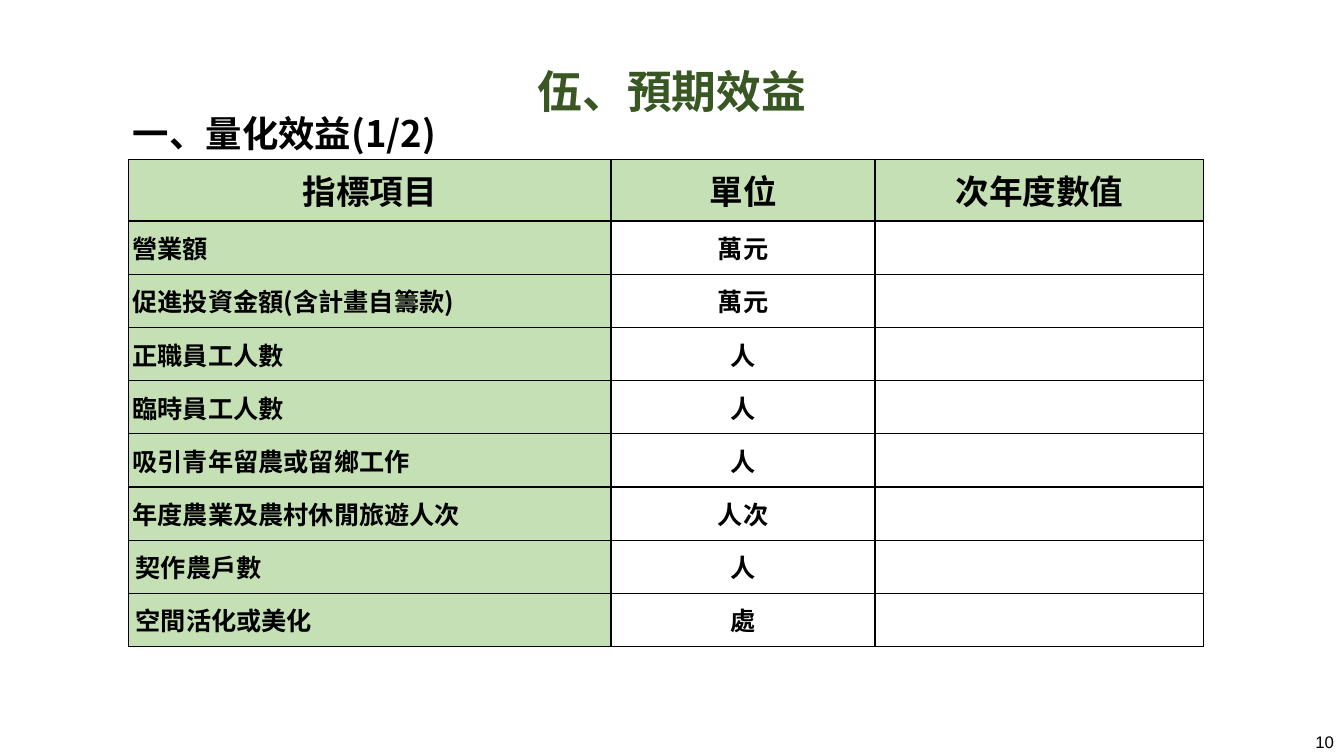
import pptx
import pptx.util
import pptx.dml.color
import pptx.enum.text
import pptx.oxml.ns
import lxml.etree

Cm = pptx.util.Cm
Pt = pptx.util.Pt
ALIGN = pptx.enum.text.PP_ALIGN
MID = pptx.enum.text.MSO_ANCHOR.MIDDLE
TOP = pptx.enum.text.MSO_ANCHOR.TOP
NOTO = "Noto Sans CJK SC"
GREEN, WHITE, BLACK = "C5E0B4", "FFFFFF", "000000"
HEAD = ["指標項目", "單位", "次年度數值"]
ITEMS = [
    ("營業額", "萬元"),
    ("促進投資金額(含計畫自籌款)", "萬元"),
    ("正職員工人數", "人"),
    ("臨時員工人數", "人"),
    ("吸引青年留農或留鄉工作", "人"),
    ("年度農業及農村休閒旅遊人次", "人次"),
    ("契作農戶數", "人"),
    ("空間活化或美化", "處"),
]
WIDE_FROM = 7  # the last rows have wider side margins
COLS = [12.16, 6.65, 8.29]
HEAD_H, ROW_H = 1.55, 1.34


def color(code):
    return pptx.dml.color.RGBColor.from_string(code)


def add(parent, tag, **attrs):
    return lxml.etree.SubElement(parent, pptx.oxml.ns.qn(tag), attrs)


def write(frame, text, size=18, font=NOTO, ink=BLACK, bold=True,
          align=ALIGN.LEFT, hang=0):
    """Fill the first paragraph of a text frame and return it."""
    para = frame.paragraphs[0]
    para.alignment = align
    if hang:
        props = para._p.get_or_add_pPr()
        props.set("marL", str(Cm(hang)))
        props.set("indent", str(-Cm(hang)))
    run = para.add_run()
    run.text = text
    run.font.size = Pt(size)
    run.font.bold = bold
    run.font.name = font
    run.font.color.rgb = color(ink)
    add(run._r.get_or_add_rPr(), "a:ea", typeface=NOTO)
    return para


def place(shape, box, anchor):
    shape.left, shape.top, shape.width, shape.height = map(Cm, box)
    frame = shape.text_frame
    frame.word_wrap = True
    frame.auto_size = pptx.enum.text.MSO_AUTO_SIZE.NONE
    frame.vertical_anchor = anchor
    return frame


def add_text(slide, box, anchor):
    return place(slide.shapes.add_textbox(0, 0, 0, 0), box, anchor)


def add_title(slide, box):
    frame = place(slide.shapes.title, box, MID)
    write(frame, "伍、預期效益", size=32, ink="385723", align=ALIGN.CENTER)


def add_section(slide, box):
    para = write(add_text(slide, box, TOP), "一、量化效益(1/2)", size=26)
    para.line_spacing = Pt(22)
    para.space_after = Pt(6)


def add_number(slide, box):
    write(add_text(slide, box, MID), "10", size=12, font="Arial",
          bold=False, align=ALIGN.RIGHT)


def style_cell(cell, fill, side):
    cell.margin_left = cell.margin_right = Cm(side)
    cell.margin_top = cell.margin_bottom = 0
    cell.vertical_anchor = MID
    props = cell._tc.get_or_add_tcPr()
    for edge in ("a:lnL", "a:lnR", "a:lnT", "a:lnB"):
        line = add(props, edge, w=str(Pt(1)))
        add(add(line, "a:solidFill"), "a:srgbClr", val=BLACK)
    cell.fill.solid()
    cell.fill.fore_color.rgb = color(fill)


def add_grid(slide, left, top):
    count = len(ITEMS) + 1
    height = HEAD_H + ROW_H * len(ITEMS)
    table = slide.shapes.add_table(count, len(COLS), Cm(left), Cm(top),
                                   Cm(sum(COLS)), Cm(height)).table
    table.first_row = table.horz_banding = False
    for col, width in zip(table.columns, COLS):
        col.width = Cm(width)
    for i, row in enumerate(table.rows):
        row.height = Cm(ROW_H if i else HEAD_H)
        wide = i >= WIDE_FROM
        for j, cell in enumerate(row.cells):
            fill = GREEN if i == 0 or j == 0 else WHITE
            style_cell(cell, fill, 0.18 if wide else 0.1)
            if i == 0:
                write(cell.text_frame, HEAD[j], size=24, font="Arial",
                      align=ALIGN.CENTER, hang=0.84)
            elif j == 0:
                write(cell.text_frame, ITEMS[i - 1][0],
                      hang=0.84 if wide else 0)
            elif j == 1:
                write(cell.text_frame, ITEMS[i - 1][1], font="Arial",
                      align=ALIGN.CENTER)


def main():
    deck = pptx.Presentation()
    deck.slide_width, deck.slide_height = Cm(33.87), Cm(19.05)
    slide = deck.slides.add_slide(deck.slide_layouts.get_by_name("Title Only"))
    add_number(slide, (26.25, 18.36, 7.62, 0.69))
    add_title(slide, (0, 1.47, 33.87, 1.62))
    add_grid(slide, 3.24, 4.02)
    add_section(slide, (3.1, 3, 13.51, 1.07))
    deck.save("out.pptx")


if __name__ == "__main__":
    main()
